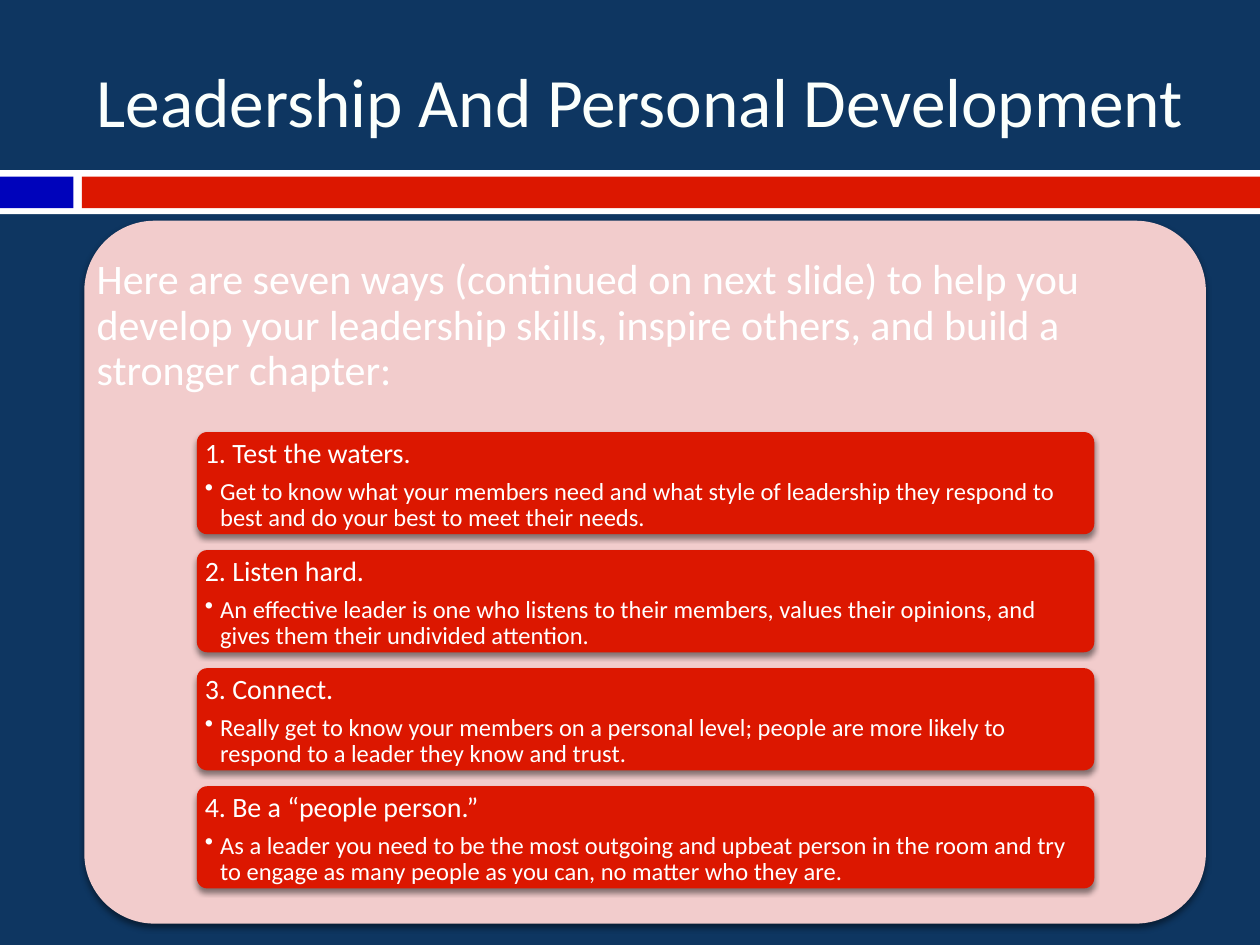
from lxml.etree import SubElement as Sub
from pptx import Presentation
from pptx.dml.color import RGBColor as Rgb
from pptx.enum.shapes import MSO_SHAPE as Form
from pptx.enum.text import MSO_ANCHOR as Anchor, PP_ALIGN as Align
from pptx.oxml.ns import qn
from pptx.util import Cm, Pt

TITLE = "Leadership And Personal Development"
LEAD = ("Here are seven ways (continued on next slide) to help you develop your "
        "leadership skills, inspire others, and build a stronger chapter:")
WAYS = [
    ("1. Test the waters.",
     "Get to know what your members need and what style of leadership they "
     "respond to best and do your best to meet their needs."),
    ("2. Listen hard.",
     "An effective leader is one who listens to their members, values their "
     "opinions, and gives them their undivided attention."),
    ("3. Connect.",
     "Really get to know your members on a personal level; people are more "
     "likely to respond to a leader they know and trust."),
    ("4. Be a “people person.”",
     "As a leader you need to be the most outgoing and upbeat person in the "
     "room and try to engage as many people as you can, no matter who they are."),
]
HUES = {"navy": "0E3661", "white": "FFFFFF", "blue": "0003BB",
        "red": "DC1700", "pink": "F2CCCC", "title": "FBFFFC"}
FONT = "Calibri"
WIDE, HIGH = 25.4, 19.05
LEFT = 1.7
CARD = {"left": 3.97, "top": 8.71, "width": 18.09, "height": 2.06}
STEP = 2.38


def hue(name):
    return Rgb.from_string(HUES[name])


def block(left, top, width, height, fill, form=Form.RECTANGLE, shade=False):
    shape = slide.shapes.add_shape(form, Cm(left), Cm(top), Cm(width), Cm(height))
    shape.shadow.inherit = False
    shape.fill.solid()
    shape.fill.fore_color.rgb = hue(fill)
    shape.line.fill.background()
    if form == Form.ROUNDED_RECTANGLE:
        shape.adjustments[0] = 0.1
    if shade:
        fx = shape._element.spPr.find(qn("a:effectLst"))
        drop = Sub(fx, qn("a:outerShdw"), blurRad=str(Pt(3)), dist=str(Pt(2.4)),
                   dir="5400000", rotWithShape="0")
        Sub(Sub(drop, qn("a:srgbClr"), val="000000"), qn("a:alpha"), val="45000")
    return shape


def frame(shape, side, edge, anchor):
    body = shape.text_frame
    body.word_wrap = True
    body.margin_left = body.margin_right = Cm(side)
    body.margin_top = body.margin_bottom = Cm(edge)
    body.vertical_anchor = anchor
    return body


def write(para, text, size, color="white", space=0.9, after=0, bullet=False):
    para.alignment = Align.LEFT
    para.line_spacing = space
    para.space_after = Pt(after)
    if bullet:
        para.level = 1
        props = para._p.get_or_add_pPr()
        props.set("marL", str(Cm(0.31)))
        props.set("indent", str(-Cm(0.31)))
        Sub(props, qn("a:buChar"), char="•")
    run = para.add_run()
    run.text = text
    run.font.name = FONT
    run.font.size = Pt(size)
    run.font.color.rgb = hue(color)


deck = Presentation()
deck.slide_width, deck.slide_height = Cm(WIDE), Cm(HIGH)
slide = deck.slides.add_slide(deck.slide_layouts[6])
slide.background.fill.solid()
slide.background.fill.fore_color.rgb = hue("navy")

block(0, 3.43, WIDE, 0.89, "white")
block(0, 3.56, 1.48, 0.64, "blue")
block(1.65, 3.56, WIDE - 1.65, 0.64, "red")

head = slide.shapes.add_textbox(Cm(LEFT), Cm(0.64), Cm(22.66), Cm(2.74))
write(frame(head, 0.25, 0.13, Anchor.MIDDLE).paragraphs[0], TITLE,
      size=39.6, color="title", space=1.0)

block(LEFT, 4.45, 22.61, 14.17, "pink", Form.ROUNDED_RECTANGLE, shade=True)
lead = slide.shapes.add_textbox(Cm(LEFT), Cm(4.45), Cm(22.61), Cm(4.26))
write(frame(lead, 0.25, 0.25, Anchor.MIDDLE).paragraphs[0], LEAD, size=24)

for row, (name, note) in enumerate(WAYS):
    spot = {**CARD, "top": CARD["top"] + row * STEP}
    card = block(**spot, fill="red", form=Form.ROUNDED_RECTANGLE, shade=True)
    body = frame(card, 0.1, 0.08, Anchor.TOP)
    write(body.paragraphs[0], name, size=16, after=5.6)
    write(body.add_paragraph(), note, size=14, after=2.1, bullet=True)

deck.save("out.pptx")
